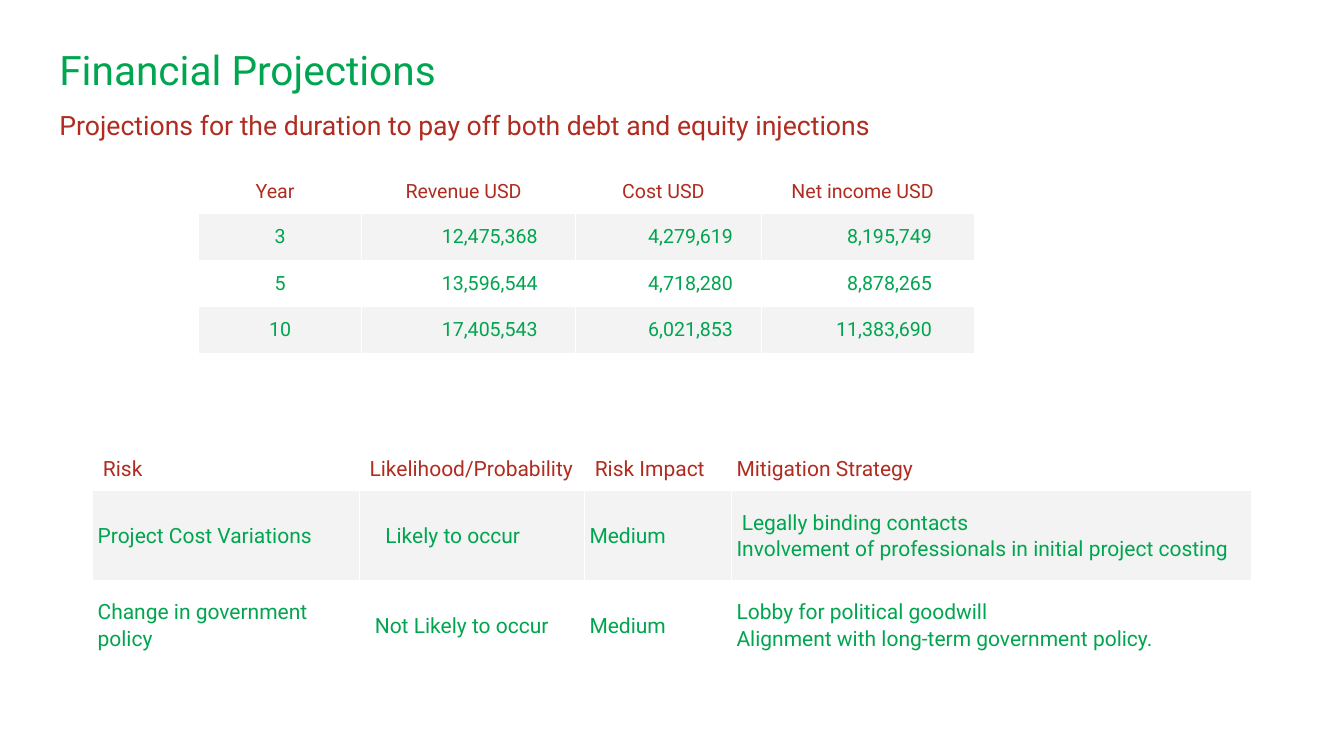
from lxml import etree
from pptx import Presentation
from pptx.dml.color import RGBColor
from pptx.enum.text import MSO_ANCHOR, MSO_AUTO_SIZE, PP_ALIGN
from pptx.oxml.ns import qn
from pptx.util import Pt

PX = 9525  # EMU in one px, at 96 px to the inch
GREEN = RGBColor(0x00, 0xA5, 0x4F)
RED = RGBColor(0xB0, 0x2C, 0x20)
WHITE = RGBColor(0xFF, 0xFF, 0xFF)
BAND = RGBColor(0xF3, 0xF3, 0xF3)
FONT = "Roboto"
LEFT, CENTER, RIGHT = PP_ALIGN.LEFT, PP_ALIGN.CENTER, PP_ALIGN.RIGHT
TOP, MIDDLE = MSO_ANCHOR.TOP, MSO_ANCHOR.MIDDLE
NO_FIT = MSO_AUTO_SIZE.NONE
MARGINS = ("margin_left", "margin_top", "margin_right", "margin_bottom")

# Projections: the figures align right, each column with its own right margin
PROJECTIONS = [
    ["Year", "Revenue USD", "Cost USD", "Net income USD"],
    ["3", "12,475,368", "4,279,619", "8,195,749"],
    ["5", "13,596,544", "4,718,280", "8,878,265"],
    ["10", "17,405,543", "6,021,853", "11,383,690"],
]
PROJECTION_COLUMNS = [311, 407, 354, 405]
PROJECTION_ROWS = [82, 89, 89, 89]
FIGURE_MARGINS = [1, 72, 54, 80]

# Risks: each cell holds lines of (indent, text)
RISKS = [
    [[(10, "Risk")], [(10, "Likelihood/Probability")], [(10, "Risk Impact")],
     [(0, "Mitigation Strategy")]],
    [[(0, "Project Cost Variations")], [(40, "Likely to occur")], [(0, "Medium")],
     [(10, "Legally binding contacts"),
      (0, "Involvement of professionals in initial project costing")]],
    [[(0, "Change in government policy")], [(20, "Not Likely to occur")], [(0, "Medium")],
     [(0, "Lobby for political goodwill"),
      (0, "Alignment with long-term government policy.")]],
]
RISK_COLUMNS = [508, 429, 280, 990]
RISK_ROWS = [84, 171, 171]


def apply(target, formats):
    for name, value in formats.items():
        setattr(target, name, value)


def set_margins(target, margins):
    apply(target, {name: px * PX for name, px in zip(MARGINS, margins)})


def write_line(paragraph, text, size, color, indent=0, align=LEFT, spacing=1.0):
    properties = paragraph._p.get_or_add_pPr()
    properties.set("marL", str(indent * PX))
    properties.set("indent", "0")
    etree.SubElement(properties, qn("a:buNone"))
    apply(paragraph, {"alignment": align, "line_spacing": spacing,
                      "space_before": Pt(0), "space_after": Pt(0)})
    run = paragraph.add_run()
    run.text = text
    apply(run.font, {"name": FONT, "size": Pt(size), "bold": False})
    run.font.color.rgb = color


def fill_placeholder(placeholder, box, margins, text, size, color, indent=0):
    apply(placeholder, dict(zip(("left", "top", "width", "height"), (px * PX for px in box))))
    frame = placeholder.text_frame
    apply(frame, {"word_wrap": True, "auto_size": NO_FIT, "vertical_anchor": TOP})
    set_margins(frame, margins)
    write_line(frame.paragraphs[0], text, size, color, indent)


def add_grid(slide, left, top, columns, rows):
    box = (left, top, sum(columns), sum(rows))
    table = slide.shapes.add_table(len(rows), len(columns), *(px * PX for px in box)).table
    apply(table, {"first_row": False, "horz_banding": False})
    for column, width in zip(table.columns, columns):
        column.width = width * PX
    for row, height in zip(table.rows, rows):
        row.height = height * PX
    return table


def style_cell(cell, row, margins):
    cell.vertical_anchor = MIDDLE
    set_margins(cell, margins)
    # White borders go before the fill
    properties = cell._tc.get_or_add_tcPr()
    for side in ("lnL", "lnR", "lnT", "lnB"):
        border = etree.SubElement(properties, qn(f"a:{side}"), w=str(Pt(0.75)))
        paint = etree.SubElement(border, qn("a:solidFill"))
        etree.SubElement(paint, qn("a:srgbClr"), val=str(WHITE))
    cell.fill.solid()
    cell.fill.fore_color.rgb = BAND if row % 2 else WHITE


def add_heading(slide, left, top):
    fill_placeholder(slide.shapes.title, (left, top, 1401, 160), (26, 26, 26, 26),
                     "Financial Projections", 58, GREEN)
    fill_placeholder(slide.placeholders[1], (left + 22, top + 144, 1886, 65), (0, 4, 0, 0),
                     "Projections for the duration to pay off both debt and equity injections",
                     38, RED, indent=4)


def add_projections(slide, left, top):
    table = add_grid(slide, left, top, PROJECTION_COLUMNS, PROJECTION_ROWS)
    for r, values in enumerate(PROJECTIONS):
        for c, value in enumerate(values):
            cell = table.cell(r, c)
            style_cell(cell, r, (1, 1, FIGURE_MARGINS[c] if r else 20, 0))
            write_line(cell.text_frame.paragraphs[0], value, 28, GREEN if r else RED,
                       align=RIGHT if r and c else CENTER)


def add_risks(slide, left, top):
    table = add_grid(slide, left, top, RISK_COLUMNS, RISK_ROWS)
    for r, risk in enumerate(RISKS):
        for c, lines in enumerate(risk):
            cell = table.cell(r, c)
            style_cell(cell, r, (10, 0, 10, 0))
            frame = cell.text_frame
            for i, (indent, text) in enumerate(lines):
                paragraph = frame.add_paragraph() if i else frame.paragraphs[0]
                write_line(paragraph, text, 30, GREEN if r else RED, indent, spacing=1.07)


def main():
    presentation = Presentation()
    apply(presentation, {"slide_width": 2560 * PX, "slide_height": 1440 * PX})
    slide = presentation.slides.add_slide(presentation.slide_layouts[1])
    add_heading(slide, 87, 60)
    add_projections(slide, 378, 324)
    add_risks(slide, 176, 850)
    presentation.save("out.pptx")


if __name__ == "__main__":
    main()
